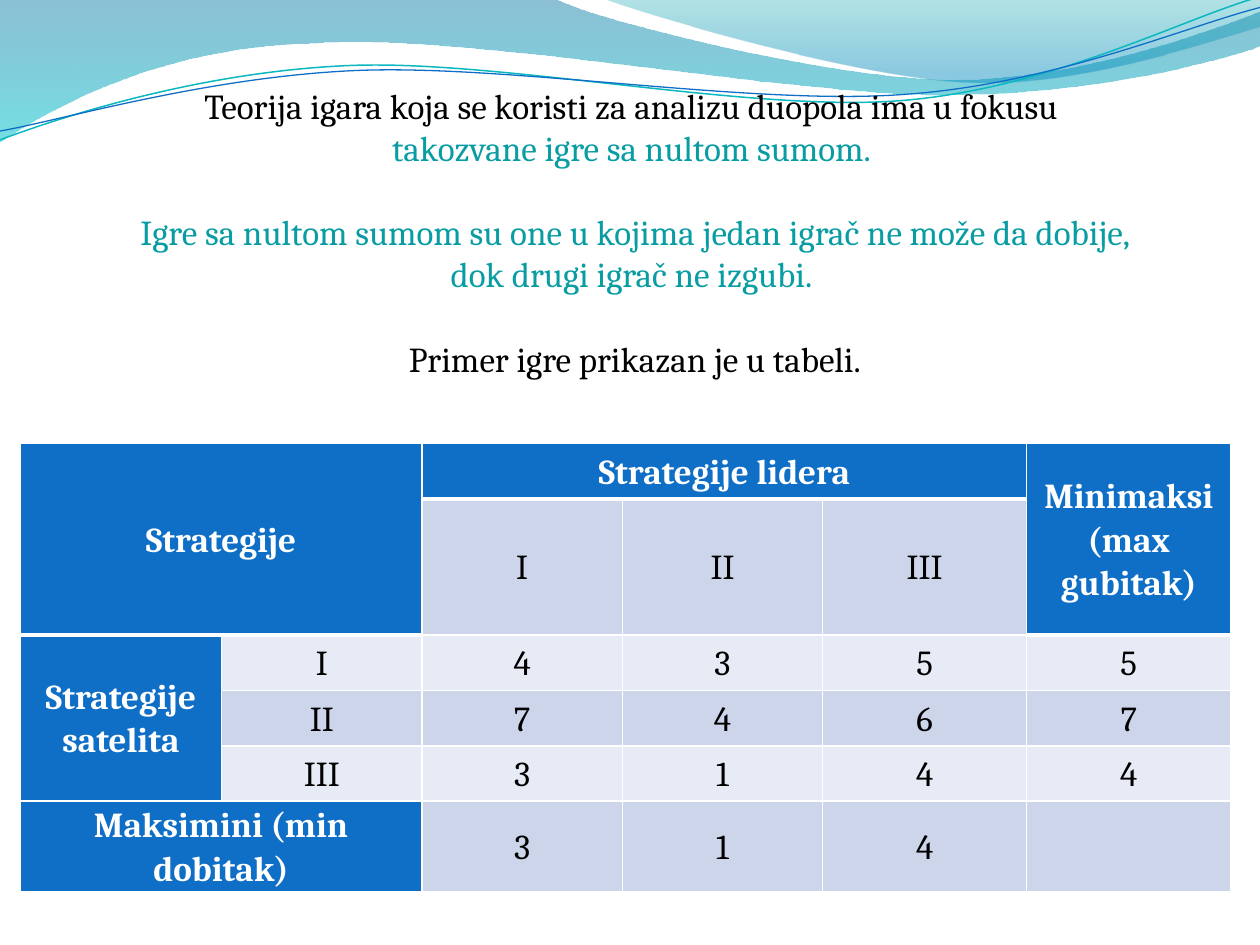
"""Build the slide on zero-sum games: wave header, centred text and payoff table."""
import math

import lxml.etree
import pptx
import pptx.dml.color
import pptx.enum.text
import pptx.oxml.ns
import pptx.util

Inches = pptx.util.Inches
Pt = pptx.util.Pt
qn = pptx.oxml.ns.qn
RGBColor = pptx.dml.color.RGBColor
CENTER = pptx.enum.text.PP_ALIGN.CENTER

BLACK = RGBColor(0x00, 0x00, 0x00)
WHITE = RGBColor(0xFF, 0xFF, 0xFF)
TEAL = RGBColor(0x08, 0x9C, 0xA3)
BLUE = RGBColor(0x0F, 0x6F, 0xC6)
AQUA = RGBColor(0x0A, 0xB8, 0xBF)
BAND_DARK = RGBColor(0xCC, 0xD5, 0xEA)
BAND_LIGHT = RGBColor(0xE7, 0xEB, 0xF5)
DEEP_BLUE = RGBColor(0x00, 0x74, 0xA1)
CYAN = RGBColor(0x00, 0xC6, 0xCF)
DEEP_TEAL = RGBColor(0x00, 0xA1, 0xA9)
SKY = RGBColor(0x00, 0x8B, 0xBF)
FONT = "Cambria"


def add_wave(shapes, start, segments, closed, tilt=0, center=(0, 0)):
    points = [start]
    for seg in segments:
        points += zip(seg[::2], seg[1::2])
    cx, cy = center
    cos, sin = math.cos(math.radians(tilt)), math.sin(math.radians(tilt))
    flat = [(Inches(cx + (x - cx) * cos + (y - cy) * sin),
             Inches(cy - (x - cx) * sin + (y - cy) * cos)) for x, y in points]
    builder = shapes.build_freeform(*flat[0], scale=1.0)
    builder.add_line_segments(flat[1:], close=closed)
    wave = builder.convert_to_shape()
    lines = iter(list(wave._element.spPr.iter(qn("a:lnTo"))))
    for seg in segments:
        steps = [next(lines) for _ in range(len(seg) // 2)]
        if len(steps) == 3:
            curve = lxml.etree.Element(qn("a:cubicBezTo"))
            steps[0].addprevious(curve)
            for step in steps:
                curve.append(step[0])
                step.getparent().remove(step)
    wave.rotation = tilt
    wave.shadow.inherit = False
    return wave


def set_borders(cell, widths):
    tcPr = cell._tc.get_or_add_tcPr()
    for side, width in widths.items():
        ln = lxml.etree.SubElement(tcPr, qn("a:ln" + side), w=str(Pt(width)))
        fill = lxml.etree.SubElement(ln, qn("a:solidFill"))
        lxml.etree.SubElement(fill, qn("a:srgbClr"), val=str(WHITE))


prs = pptx.Presentation()
prs.slide_width, prs.slide_height = Inches(10), Inches(7.5)
s = prs.slides.add_slide(prs.slide_layouts[6])

filled_waves = [
    ((0, 0), [(4.4, -0.01), (4.76, 0.17, 6.64, 0.63, 7.58, 0.63),
              (8.53, 0.63, 9.58, 0.26, 10, 0.09), (10.01, 0.36),
              (9.83, 0.44, 8.7, 0.76, 7.46, 0.75), (6.22, 0.75, 3.82, 0.28, 2.57, 0.34),
              (1.29, 0.36, 0.46, 0.83, -0.01, 1.13), (0, 0)],
     [(0, DEEP_BLUE, 45), (1, CYAN, 55)]),
    ((4.79, -0.01), [(5.09, 0.11, 6.82, 0.62, 7.69, 0.65),
                     (8.56, 0.69, 9.61, 0.32, 10, 0.21), (10, 0), (4.79, -0.01)],
     [(0, DEEP_TEAL, 30), (0.8, SKY, 45)]),
]
for start, segments, stops in filled_waves:
    sp = add_wave(s.shapes, start, segments, True)
    sp.line.fill.background()
    sp.fill.gradient()
    sp.fill.gradient_angle = 270
    for stop, (position, color, opacity) in zip(sp.fill.gradient_stops, stops):
        stop.position = position
        stop.color.rgb = color
    for clr, (position, color, opacity) in zip(sp._element.spPr.iter(qn("a:srgbClr")), stops):
        lxml.etree.SubElement(clr, qn("a:alpha"), val=str(opacity * 1000))

line_waves = [
    ((0, 1.11), [(0.48, 0.93, 1.58, 0.57, 2.77, 0.52), (3.95, 0.47, 5.93, 0.89, 7.13, 0.8),
                 (8.33, 0.71, 9.38, 0.15, 9.98, -0.02)], (4.99, 0.58), AQUA, 0.85),
    ((0, 1.04), [(0.47, 0.96, 1.64, 0.61, 2.83, 0.56), (4.03, 0.51, 5.97, 0.84, 7.17, 0.75),
                 (8.36, 0.67, 9.41, 0.21, 10, 0.06)], (5, 0.59), BLUE, 0.75),
]
for start, segments, center, color, width in line_waves:
    sp = add_wave(s.shapes, start, segments, False, -2.7, center)
    sp.fill.background()
    sp.line.color.rgb = color
    sp.line.width = Pt(width)

paragraphs = [
    ("Teorija igara koja se koristi za analizu duopola ima u fokusu ", BLACK, 0),
    ("takozvane igre sa nultom sumom. ", TEAL, 0),
    ("Igre sa nultom sumom su one u kojima jedan igrač ne može da dobije, "
     "dok drugi igrač ne izgubi. ", TEAL, 24.2),
    ("Primer igre prikazan je u tabeli.", BLACK, 24.2),
]
tf = s.shapes.add_textbox(Inches(0.94), Inches(0.62), Inches(8.2), Inches(2.46)).text_frame
tf.word_wrap = True
tf.auto_size = pptx.enum.text.MSO_AUTO_SIZE.SHAPE_TO_FIT_TEXT
tf.text = "\n".join(text for text, color, gap in paragraphs)
for p, (text, color, gap) in zip(tf.paragraphs, paragraphs):
    p.alignment = CENTER
    p.space_before = Pt(gap)
    font = p.runs[0].font
    font.name, font.size, font.color.rgb = FONT, Pt(20), color

rows = [
    ["Strategije", "", "Strategije lidera", "", "", "Minimaksi (max gubitak)"],
    ["", "", "I", "II", "III", ""],
    ["Strategije satelita", "I", "4", "3", "5", "5"],
    ["", "II", "7", "4", "6", "7"],
    ["", "III", "3", "1", "4", "4"],
    ["Maksimini (min dobitak)", "", "3", "1", "4", ""],
]
col_widths = [1.6, 1.59, 1.59, 1.59, 1.62, 1.62]
row_heights = [0.44, 1.08, 0.44, 0.44, 0.44, 0.72]
merges = [(0, 0, 1, 1), (0, 2, 0, 4), (0, 5, 1, 5), (2, 0, 4, 0), (5, 0, 5, 1)]
header_cells = {(r, c) for top, left, bottom, right in merges
                for r in range(top, bottom + 1) for c in range(left, right + 1)}
heavy_bottoms = {(0, c) for c in range(6)} | {(1, 0), (1, 1), (1, 5)}

table = s.shapes.add_table(6, 6, Inches(0.16), Inches(3.52),
                           Inches(sum(col_widths)), Inches(sum(row_heights))).table
for column, width in zip(table.columns, col_widths):
    column.width = Inches(width)
for row, height in zip(table.rows, row_heights):
    row.height = Inches(height)
for top, left, bottom, right in merges:
    table.cell(top, left).merge(table.cell(bottom, right))

for r, texts in enumerate(rows):
    for c, text in enumerate(texts):
        cell = table.cell(r, c)
        is_header = (r, c) in header_cells
        set_borders(cell, {"L": 1, "R": 1, "T": 1, "B": 3 if (r, c) in heavy_bottoms else 1})
        cell.fill.solid()
        cell.fill.fore_color.rgb = BLUE if is_header else BAND_DARK if r % 2 else BAND_LIGHT
        cell.vertical_anchor = pptx.enum.text.MSO_ANCHOR.MIDDLE
        cell.margin_left = cell.margin_right = Inches(0.07)
        cell.margin_top = cell.margin_bottom = 0
        if not text:
            continue
        cell.text_frame.text = text
        p = cell.text_frame.paragraphs[0]
        p.alignment = CENTER
        p.line_spacing = 1.08
        font = p.runs[0].font
        font.name, font.size, font.bold = FONT, Pt(20), is_header
        font.color.rgb = WHITE if is_header else BLACK

prs.save("out.pptx")
